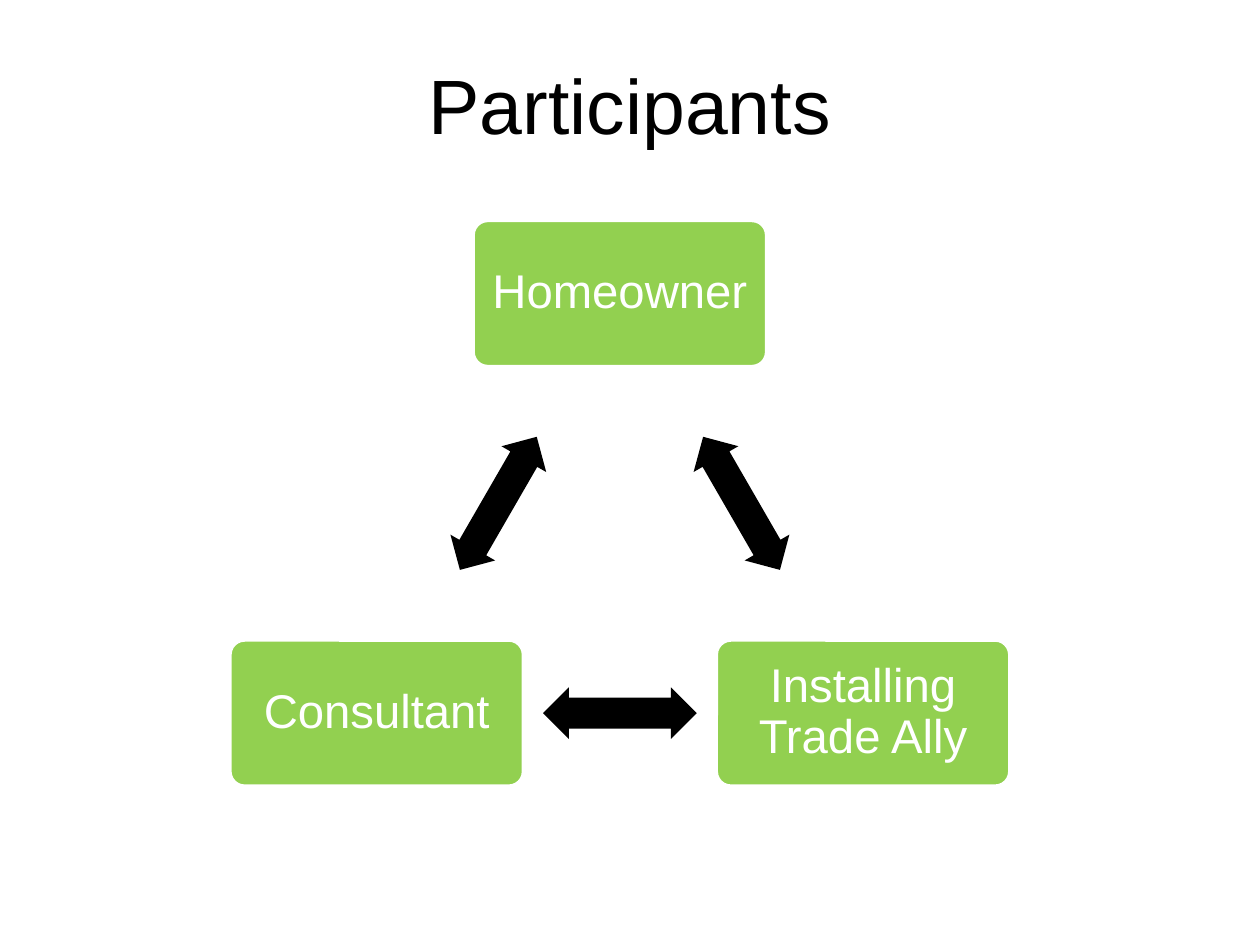
import pptx
import pptx.util
from pptx.dml.color import RGBColor
from pptx.enum.shapes import MSO_SHAPE
from pptx.enum.text import MSO_ANCHOR, PP_ALIGN
from pptx.util import Inches, Pt

# Content: participants with the centre of each box, in inches
TITLE = "Participants"
PARTICIPANTS = [
    ("Homeowner", 4.92, 2.33),
    ("Installing Trade Ally", 6.85, 5.66),
    ("Consultant", 2.99, 5.66),
]
ARROW_ANGLES = [60, 180, 300]  # each arrow leads to the next participant

COLORS = {"box": "92D050", "light": "FFFFFF", "dark": "000000"}
FONT = "Arial"
BOX_SIZE = (2.33, 1.16)
ARROW_SIZE = (1.22, 0.41)


def color(name):
    return RGBColor.from_string(COLORS[name])


def add_centered(slide, preset, center, size, fill):
    (x, y), (width, height) = center, size
    shape = slide.shapes.add_shape(
        preset, Inches(x - width / 2), Inches(y - height / 2),
        Inches(width), Inches(height))
    shape.shadow.inherit = False
    shape.fill.solid()
    shape.fill.fore_color.rgb = color(fill)
    return shape


def write(frame, text, size, ink):
    frame.word_wrap = True
    frame.vertical_anchor = MSO_ANCHOR.MIDDLE
    paragraph = frame.paragraphs[0]
    paragraph.text = text
    paragraph.alignment = PP_ALIGN.CENTER
    paragraph.font.name = FONT
    paragraph.font.size = Pt(size)
    paragraph.font.color.rgb = color(ink)
    return paragraph


def add_participant(slide, name, center):
    box = add_centered(slide, MSO_SHAPE.ROUNDED_RECTANGLE, center, BOX_SIZE, "box")
    box.adjustments[0] = 0.1
    box.line.color.rgb = color("light")
    box.line.width = Pt(2)
    frame = box.text_frame
    frame.margin_left = frame.margin_right = Inches(0.07)
    frame.margin_top = frame.margin_bottom = Inches(0.07)
    write(frame, name, 27, "light").line_spacing = 0.9


def add_exchange(slide, start, end, angle):
    middle = [(a + b) / 2 for a, b in zip(start, end)]
    arrow = add_centered(slide, MSO_SHAPE.LEFT_RIGHT_ARROW, middle, ARROW_SIZE, "dark")
    arrow.adjustments[0] = 0.6
    arrow.adjustments[1] = 0.5
    arrow.line.fill.background()
    arrow.rotation = angle


def main():
    deck = pptx.Presentation()
    deck.slide_width, deck.slide_height = Inches(10), Inches(7.5)
    slide = deck.slides.add_slide(deck.slide_layouts[5])

    # Title
    title = slide.shapes.title
    title.left, title.top = Inches(0.75), Inches(0.2)
    title.width, title.height = Inches(8.5), Inches(1.25)
    write(title.text_frame, TITLE, 44, "dark")

    # Cycle of participants, each followed by the arrow to the next
    centers = [(x, y) for _, x, y in PARTICIPANTS]
    next_centers = centers[1:] + centers[:1]
    for (name, _, _), center, following, angle in zip(
            PARTICIPANTS, centers, next_centers, ARROW_ANGLES):
        add_participant(slide, name, center)
        add_exchange(slide, center, following, angle)

    deck.save("out.pptx")


if __name__ == "__main__":
    main()
